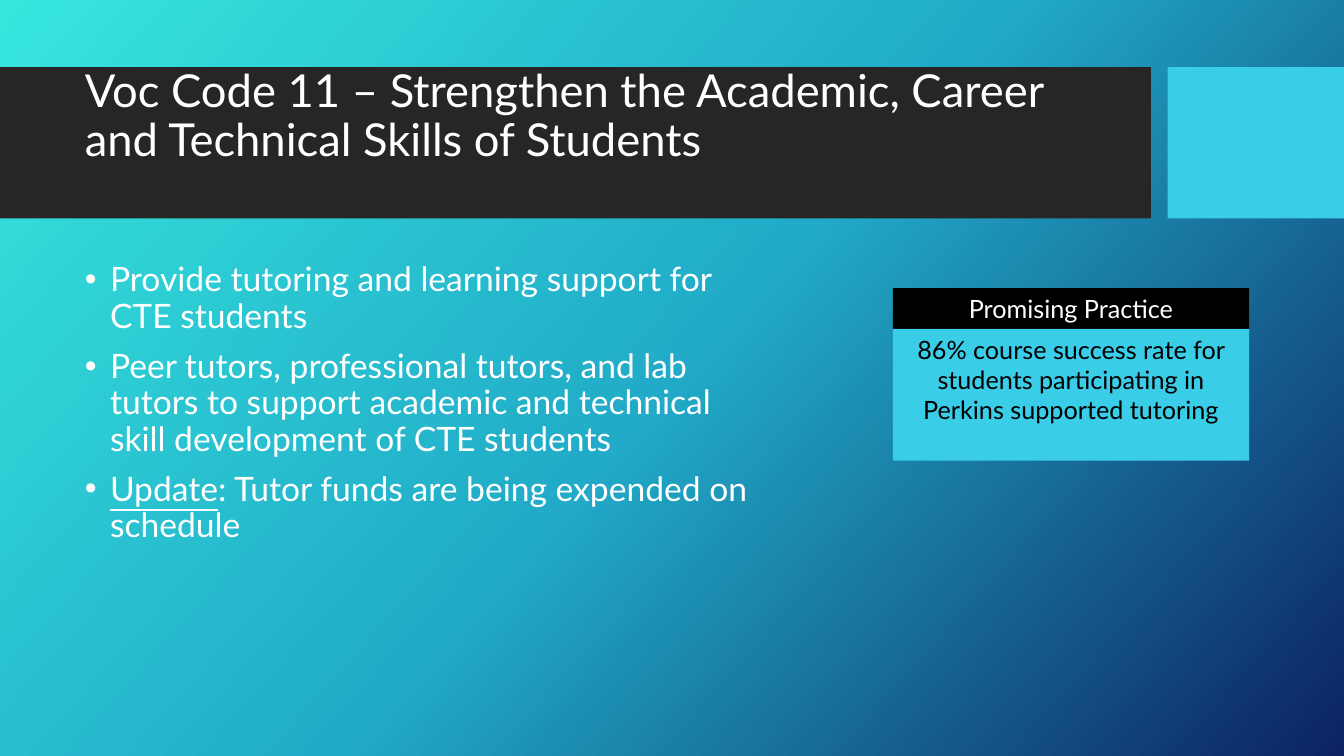
from copy import deepcopy

from lxml import etree
from pptx import Presentation
from pptx import util as u
from pptx.dml.color import RGBColor
from pptx.enum import shapes, text
from pptx.oxml.ns import qn

WHITE = RGBColor(0xFF, 0xFF, 0xFF)
BLACK = RGBColor(0x00, 0x00, 0x00)
CHARCOAL = RGBColor(0x26, 0x26, 0x26)
CYAN = RGBColor(0x39, 0xCD, 0xE7)
BACKDROP = [
    (0, RGBColor(0x36, 0xE6, 0xDD)),
    (0.5, RGBColor(0x21, 0xAB, 0xC8)),
    (1, RGBColor(0x0C, 0x22, 0x63)),
]


class SlideBuilder:
    """Draw styled elements on one slide, measured on a 160 by 90 grid."""

    FONT = "Lato"
    COLUMNS, ROWS = 160, 90

    def __init__(self, deck):
        self.cell_width = deck.slide_width / self.COLUMNS
        self.cell_height = deck.slide_height / self.ROWS
        self.page = deck.slides.add_slide(deck.slide_layouts[1])

    def area(self, column, row, columns, rows):
        """Turn grid cells into left, top, width and height."""
        return (
            u.Emu(round(column * self.cell_width)),
            u.Emu(round(row * self.cell_height)),
            u.Emu(round(columns * self.cell_width)),
            u.Emu(round(rows * self.cell_height)),
        )

    def backdrop(self, stops, angle):
        """Fill the background with a three-stop gradient."""
        fill = self.page.background.fill
        fill.gradient()
        fill.gradient_angle = angle
        stop_list = self.page.element.find(".//" + qn("a:gsLst"))
        stop_list.append(deepcopy(stop_list[-1]))
        for stop, (position, color) in zip(fill.gradient_stops, stops):
            stop.position = position
            stop.color.rgb = color

    def span(self, para, words, size, color, underline=False):
        """Add one styled run to a paragraph."""
        run = para.add_run()
        run.text = words
        run.font.name = self.FONT
        run.font.size = u.Pt(size)
        run.font.color.rgb = color
        run.font.underline = underline

    def panel(self, cells, color):
        """Add a plain filled rectangle."""
        box = self.page.shapes.add_shape(shapes.MSO_SHAPE.RECTANGLE, *self.area(*cells))
        box.shadow.inherit = False
        box.fill.solid()
        box.fill.fore_color.rgb = color
        box.line.fill.background()
        return box

    def band(self, cells, color):
        """Add a rectangle behind everything else."""
        box = self.panel(cells, color)
        self.page.shapes.element.insert(2, box.element)

    def label(self, cells, color, words, ink):
        """Add a filled rectangle with centred text at its top."""
        frame = self.panel(cells, color).text_frame
        frame.word_wrap = True
        frame.vertical_anchor = text.MSO_ANCHOR.TOP
        para = frame.paragraphs[0]
        para.alignment = text.PP_ALIGN.CENTER
        self.span(para, words, 18, ink)

    def placeholder(self, index, cells, anchor):
        """Place a template placeholder and return its text frame."""
        box = self.page.placeholders[index]
        box.left, box.top, box.width, box.height = self.area(*cells)
        frame = box.text_frame
        frame.word_wrap = True
        frame.auto_size = text.MSO_AUTO_SIZE.NONE
        frame.vertical_anchor = anchor
        return frame

    def title(self, cells, words):
        """Fill the title, lifted by a deep bottom inset."""
        frame = self.placeholder(0, cells, text.MSO_ANCHOR.MIDDLE)
        frame.margin_bottom = u.Inches(0.54)
        para = frame.paragraphs[0]
        para.alignment = text.PP_ALIGN.LEFT
        para.line_spacing = 0.9
        self.span(para, words, 32.4, WHITE)

    def bullets(self, cells, items):
        """Fill the body with bullets given as (words, underline) runs."""
        frame = self.placeholder(1, cells, text.MSO_ANCHOR.TOP)
        for number, item in enumerate(items):
            para = frame.add_paragraph() if number else frame.paragraphs[0]
            props = para._p.get_or_add_pPr()
            props.set("marL", str(u.Inches(0.25)))
            props.set("indent", str(-u.Inches(0.25)))
            etree.SubElement(props, qn("a:buFont"), typeface="Arial")
            etree.SubElement(props, qn("a:buChar"), char="•")
            para.line_spacing = 0.9
            para.space_before = u.Pt(10 if number else 0)
            for words, underline in item:
                self.span(para, words, 24, WHITE, underline)


def main():
    """Build and save the slide."""
    deck = Presentation()
    deck.slide_width, deck.slide_height = u.Inches(13.33), u.Inches(7.5)
    slide = SlideBuilder(deck)
    slide.backdrop(BACKDROP, 360 - 42)
    slide.band((0, 8, 137, 18), CHARCOAL)
    slide.band((139, 8, 21, 18), CYAN)
    slide.title(
        (8.9, 9.84, 126.1, 14.2),
        "Voc Code 11 – Strengthen the Academic, Career and Technical Skills of Students",
    )
    slide.bullets((8.9, 30.7, 82, 47.3), [
        [("Provide tutoring and learning support for CTE students", False)],
        [("Peer tutors, professional tutors, and lab tutors to support academic "
          "and technical skill development of CTE students", False)],
        [("Update", True), (": Tutor funds are being expended on schedule", False)],
    ])
    slide.label((106.3, 34.3, 42.4, 4.85), BLACK, "Promising Practice", WHITE)
    slide.label(
        (106.3, 39.15, 42.4, 15.7), CYAN,
        "86% course success rate for students participating in Perkins supported tutoring",
        BLACK,
    )
    deck.save("out.pptx")


if __name__ == "__main__":
    main()
